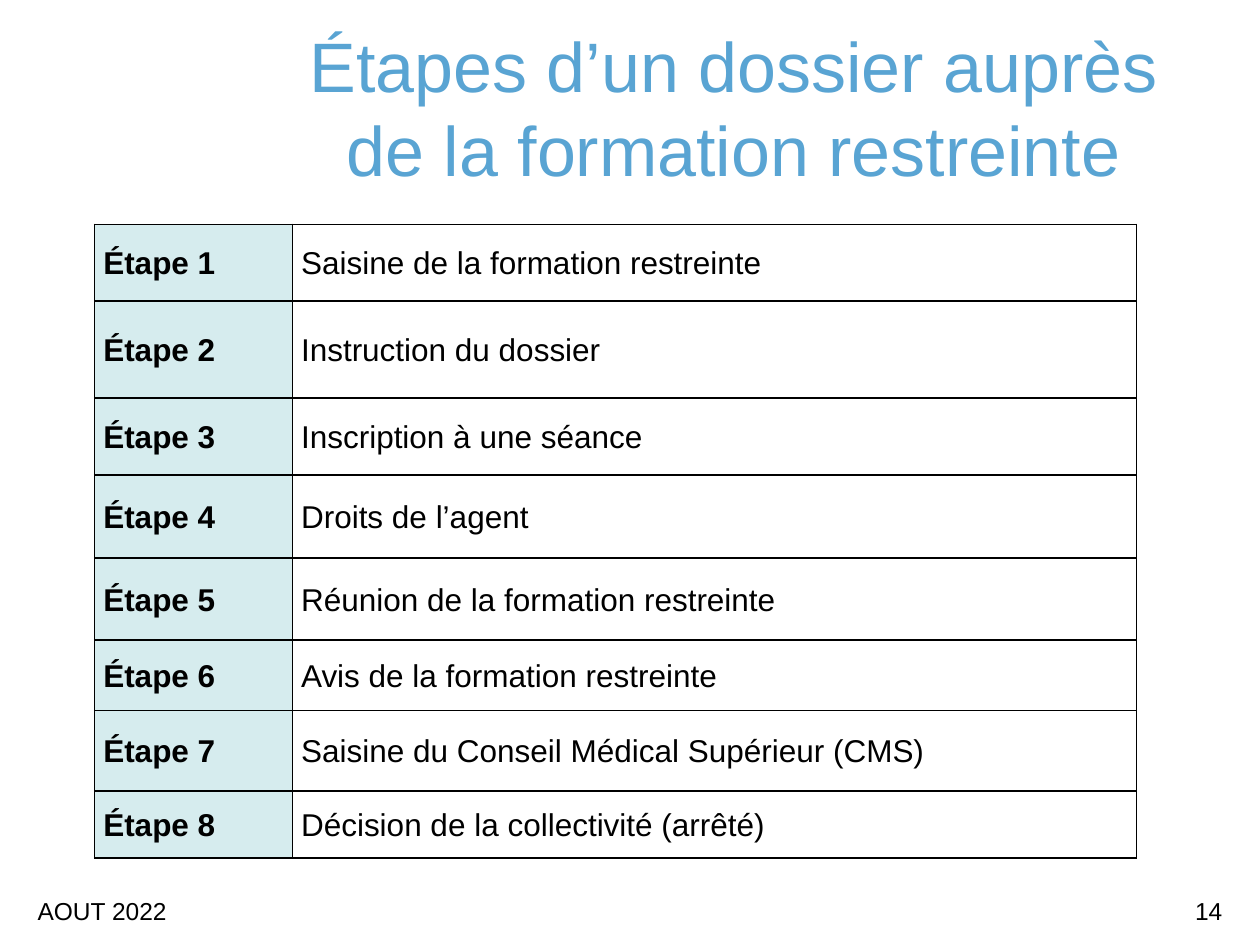
from pptx import Presentation
from pptx.dml.color import RGBColor
from pptx.enum.text import MSO_ANCHOR as Anchor, MSO_AUTO_SIZE as AutoSize, PP_ALIGN as Align
from pptx.oxml import parse_xml
from pptx.oxml.ns import nsdecls
from pptx.util import Inches, Pt

COLORS = {"title": "59A4D3", "text": "000000", "border": "000000",
          "step": "D6ECEE", "label": "FFFFFF"}
FONT = "Arial"
COLUMNS, ROWS = 100, 75
STEPS = ["Saisine de la formation restreinte", "Instruction du dossier",
         "Inscription à une séance", "Droits de l’agent",
         "Réunion de la formation restreinte", "Avis de la formation restreinte",
         "Saisine du Conseil Médical Supérieur (CMS)",
         "Décision de la collectivité (arrêté)"]
STEP_HEIGHTS = [6.1, 7.7, 6.1, 6.6, 6.5, 5.6, 6.4, 5.3]
STEP_WIDTHS = [15.7, 67]


def write(frame, text, size=18, color="text", bold=False, align=Align.LEFT, spacing=None):
    para = frame.paragraphs[0]
    para.alignment = align
    para.line_spacing = spacing
    span = para.add_run()
    span.text = text
    span.font.name = FONT
    span.font.size = Pt(size)
    span.font.bold = bold
    span.font.color.rgb = RGBColor.from_string(COLORS[color])


class SlideBuilder:
    """Places styled elements on one slide, measured in grid columns and rows."""

    def __init__(self, deck):
        self.page = deck.slides.add_slide(deck.slide_layouts[5])
        self.column = deck.slide_width / COLUMNS
        self.row = deck.slide_height / ROWS

    def area(self, left, top, width, height):
        return (round(left * self.column), round(top * self.row),
                round(width * self.column), round(height * self.row))

    def title(self, text, *place):
        box = self.page.shapes.title
        box.left, box.top, box.width, box.height = self.area(*place)
        frame = box.text_frame
        frame.word_wrap = True
        frame.auto_size = AutoSize.NONE
        frame.vertical_anchor = Anchor.MIDDLE
        write(frame, text, size=40, color="title", align=Align.CENTER)

    def footer(self, text, *place, align=Align.LEFT):
        frame = self.page.shapes.add_textbox(*self.area(*place)).text_frame
        frame.word_wrap = True
        write(frame, text, size=14, align=align)

    def table(self, records, left, top, widths, heights):
        place = self.area(left, top, sum(widths), sum(heights))
        table = self.page.shapes.add_table(len(heights), len(widths), *place).table
        table.first_row = table.horz_banding = False
        for column, width in zip(table.columns, widths):
            column.width = round(width * self.column)
        for row, height, (step, label) in zip(table.rows, heights, records):
            row.height = round(height * self.row)
            self.cell(row.cells[0], step, "step", bold=True)
            self.cell(row.cells[1], label, "label")

    def cell(self, cell, text, fill, bold=False):
        cell.margin_left = cell.margin_right = Inches(0.07)
        cell.margin_top = cell.margin_bottom = 0
        cell.vertical_anchor = Anchor.MIDDLE
        write(cell.text_frame, text, bold=bold, spacing=1.07)
        properties = cell._tc.get_or_add_tcPr()
        for side in ("lnL", "lnR", "lnT", "lnB"):
            properties.append(parse_xml(
                f'<a:{side} {nsdecls("a")} w="{Pt(1)}"><a:solidFill>'
                f'<a:srgbClr val="{COLORS["border"]}"/></a:solidFill></a:{side}>'))
        cell.fill.solid()
        cell.fill.fore_color.rgb = RGBColor.from_string(COLORS[fill])


def main():
    deck = Presentation()
    deck.slide_width, deck.slide_height = Inches(10), Inches(7.5)
    slide = SlideBuilder(deck)
    slide.title("Étapes d’un dossier auprès de la formation restreinte",
                21.6, 2.2, 73.2, 12.5)
    slide.footer("AOUT 2022", 2, 70.6, 23.3, 3.1)
    slide.footer("14", 74.7, 70.6, 23.3, 3.1, align=Align.RIGHT)
    records = [(f"Étape {number}", label) for number, label in enumerate(STEPS, 1)]
    slide.table(records, 7.5, 17.8, STEP_WIDTHS, STEP_HEIGHTS)
    deck.save("out.pptx")


if __name__ == "__main__":
    main()
